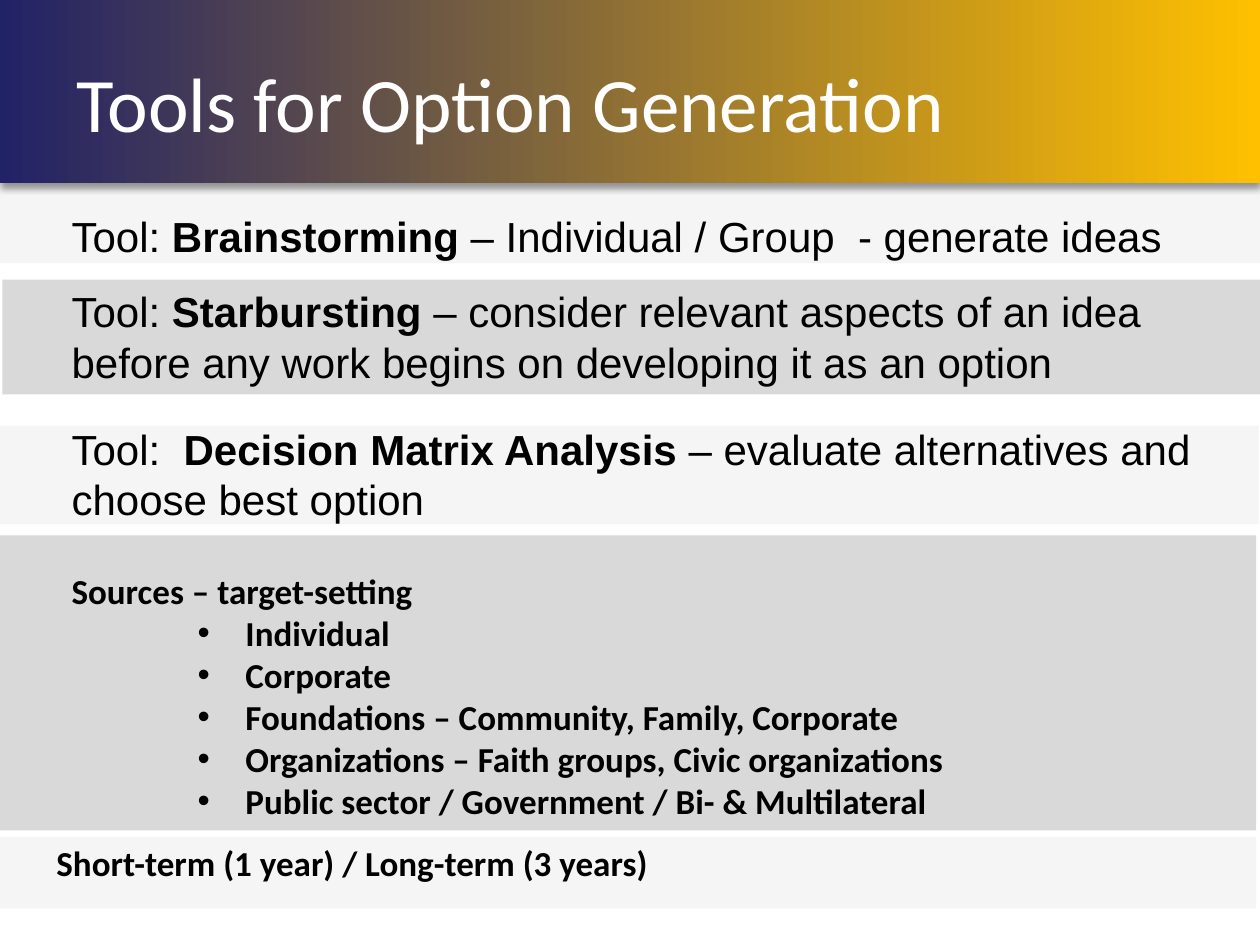
from dataclasses import dataclass

from pptx import Presentation
from pptx.dml.color import RGBColor
from pptx.enum.shapes import MSO_SHAPE
from pptx.enum.text import MSO_ANCHOR, MSO_AUTO_SIZE
from pptx.oxml import parse_xml
from pptx.oxml.ns import nsdecls, qn
from pptx.shapes.autoshape import Shape
from pptx.slide import Slide
from pptx.text.text import _Paragraph
from pptx.util import Inches, Pt


@dataclass(frozen=True)
class Theme:
    navy: RGBColor = RGBColor(0x22, 0x22, 0x67)
    gold: RGBColor = RGBColor(0xFF, 0xC0, 0x00)
    pale: RGBColor = RGBColor(0xF2, 0xF2, 0xF2)
    grey: RGBColor = RGBColor(0xD9, 0xD9, 0xD9)
    white: RGBColor = RGBColor(0xFF, 0xFF, 0xFF)
    black: RGBColor = RGBColor(0, 0, 0)
    heading_font: str = "Calibri"
    tool_font: str = "Arial"
    title_size: int = 44
    tool_size: int = 24
    source_size: int = 20
    pale_opacity: int = 70


@dataclass(frozen=True)
class Band:
    left: float
    top: float
    height: float
    pale: bool


@dataclass(frozen=True)
class Tool:
    top: float
    width: float
    height: float
    lead: str
    name: str
    purpose: str


THEME = Theme()
SLIDE_WIDTH = 10
TEXT_LEFT = 0.47
SOURCE_WIDTH = 8.8

BANDS = [
    Band(-0.03, 6.64, 0.57, True),
    Band(0, 1.36, 0.73, True),
    Band(0.02, 2.22, 0.91, False),
    Band(-0.01, 3.38, 0.78, True),
    Band(-0.03, 4.25, 2.34, False),
]
TOOLS = [
    Tool(1.62, 9.53, 0.5, "Tool: ", "Brainstorming",
         " – Individual / Group  - generate ideas"),
    Tool(3.31, 9.33, 0.91, "Tool:  ", "Decision Matrix Analysis ",
         "– evaluate alternatives and choose best option"),
    Tool(2.22, 9.53, 0.91, "Tool: ", "Starbursting",
         " – consider relevant aspects of an idea before any work begins "
         "on developing it as an option"),
]
SOURCES = [
    "Individual",
    "Corporate",
    "Foundations – Community, Family, Corporate",
    "Organizations – Faith groups, Civic organizations",
    "Public sector / Government / Bi- & Multilateral",
]


def add_rectangle(slide: Slide, left: float, top: float, height: float) -> Shape:
    rectangle = slide.shapes.add_shape(
        MSO_SHAPE.RECTANGLE,
        Inches(left), Inches(top), Inches(SLIDE_WIDTH), Inches(height))
    rectangle.shadow.inherit = False
    rectangle.line.fill.background()
    return rectangle


def add_band(slide: Slide, band: Band) -> None:
    stripe = add_rectangle(slide, band.left, band.top, band.height)
    stripe.fill.solid()
    stripe.fill.fore_color.rgb = THEME.pale if band.pale else THEME.grey
    if band.pale:
        color = stripe.fill._xPr.find(qn("a:solidFill"))[0]
        color.append(parse_xml(
            f'<a:alpha {nsdecls("a")} val="{THEME.pale_opacity * 1000}"/>'))


def add_header(slide: Slide) -> None:
    header = add_rectangle(slide, 0, 0, 1.45)
    header.fill.gradient()
    header.fill.gradient_angle = 0
    for stop, color in zip(header.fill.gradient_stops, (THEME.navy, THEME.gold)):
        stop.color.rgb = color
    effects = header._element.spPr.find(qn("a:effectLst"))
    effects.append(parse_xml(
        f'<a:outerShdw {nsdecls("a")} blurRad="{Pt(4)}" dist="{Pt(3)}" '
        'dir="5400000" algn="t" rotWithShape="0">'
        '<a:srgbClr val="000000"><a:alpha val="40000"/></a:srgbClr></a:outerShdw>'))


def add_text_area(slide: Slide, left: float, top: float,
                  width: float, height: float) -> Shape:
    area = slide.shapes.add_textbox(
        Inches(left), Inches(top), Inches(width), Inches(height))
    area.text_frame.word_wrap = True
    area.text_frame.auto_size = MSO_AUTO_SIZE.SHAPE_TO_FIT_TEXT
    return area


def add_run(paragraph: _Paragraph, text: str, font: str, size: int,
            bold: bool = False, color: RGBColor = THEME.black) -> None:
    run = paragraph.add_run()
    run.text = text
    run.font.name = font
    run.font.size = Pt(size)
    run.font.bold = bold
    run.font.color.rgb = color


def add_source_run(paragraph: _Paragraph, text: str) -> None:
    add_run(paragraph, text, THEME.heading_font, THEME.source_size, bold=True)


def set_bullet(paragraph: _Paragraph) -> None:
    paragraph.level = 2
    properties = paragraph._p.get_or_add_pPr()
    properties.set("marL", str(Inches(1.38)))
    properties.set("indent", str(Inches(-0.38)))
    properties.append(parse_xml(f'<a:buFont {nsdecls("a")} typeface="Arial"/>'))
    properties.append(parse_xml(f'<a:buChar {nsdecls("a")} char="•"/>'))


def add_title(slide: Slide) -> None:
    frame = add_text_area(slide, 0.61, 0.15, 9.2, 1.32).text_frame
    frame.auto_size = MSO_AUTO_SIZE.NONE
    frame.vertical_anchor = MSO_ANCHOR.MIDDLE
    frame.margin_left = frame.margin_right = Inches(0)
    frame.margin_top = frame.margin_bottom = Inches(0)
    add_run(frame.paragraphs[0], "Tools for Option Generation",
            THEME.heading_font, THEME.title_size, color=THEME.white)


def add_tool(slide: Slide, tool: Tool) -> None:
    area = add_text_area(slide, TEXT_LEFT, tool.top, tool.width, tool.height)
    paragraph = area.text_frame.paragraphs[0]
    for text, bold in ((tool.lead, False), (tool.name, True), (tool.purpose, False)):
        add_run(paragraph, text, THEME.tool_font, THEME.tool_size, bold)


def add_sources(slide: Slide) -> None:
    frame = add_text_area(slide, TEXT_LEFT, 4.47, SOURCE_WIDTH, 2.12).text_frame
    add_source_run(frame.paragraphs[0], "Sources – target-setting")
    for source in SOURCES:
        paragraph = frame.add_paragraph()
        set_bullet(paragraph)
        add_source_run(paragraph, source)


def add_time_frame(slide: Slide) -> None:
    area = add_text_area(slide, 0.35, 6.63, SOURCE_WIDTH, 0.44)
    add_source_run(area.text_frame.paragraphs[0],
                   "Short-term (1 year) / Long-term (3 years)")


def main() -> None:
    presentation = Presentation()
    presentation.slide_width = Inches(SLIDE_WIDTH)
    presentation.slide_height = Inches(7.5)
    slide = presentation.slides.add_slide(presentation.slide_layouts[6])

    # Background bands and header
    for band in BANDS:
        add_band(slide, band)
    add_header(slide)

    # Text
    add_title(slide)
    add_time_frame(slide)
    add_sources(slide)
    for tool in TOOLS:
        add_tool(slide, tool)

    presentation.save("out.pptx")


if __name__ == "__main__":
    main()
